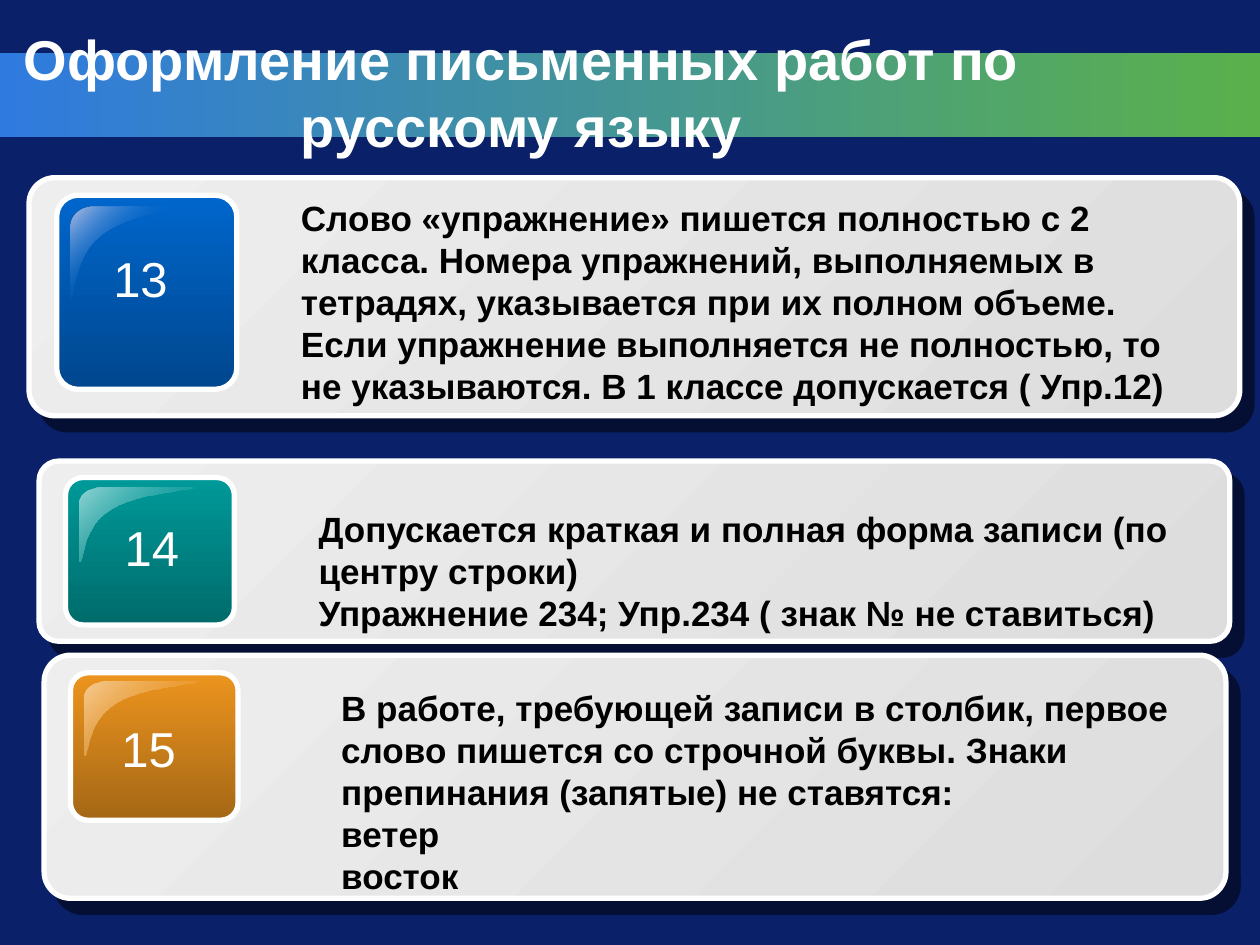
"""Build a slide of three numbered rules for written work in Russian."""
import dataclasses

import lxml.etree
import pptx
import pptx.dml.color
import pptx.enum.shapes
import pptx.enum.text
import pptx.oxml.ns
import pptx.util

Inches = pptx.util.Inches
qn = pptx.oxml.ns.qn
SHAPE = pptx.enum.shapes.MSO_SHAPE
ALIGN = pptx.enum.text.PP_ALIGN
ANCHOR = pptx.enum.text.MSO_ANCHOR
FIT = pptx.enum.text.MSO_AUTO_SIZE

Box = tuple[float, float, float, float]
Stop = tuple[int, str, int]

HUES = {
    "back": "0A2068", "white": "FFFFFF", "black": "000000",
    "sky": "2F7ADF", "grass": "5AB14B", "pale": "EEEEEE", "grey": "DDDDDD",
    "blue": "0066CC", "navy": "00478E", "mist": "B5C0E5",
    "teal": "009999", "pine": "006B6B", "mint": "93D4D4",
    "gold": "EC941E", "brown": "A56715", "cream": "F6CB92",
}
CURVES = [
    [(0.2, 0), (0.09, 0), (0, 0.09), (0, 0.21)],
    [(0, 0.99), (0.04, 1.01), (0.02, 0.52), (0.27, 0.3)],
    [(0.27, 0.3), (0.52, 0.06), (1, 0.05), (0.99, 0)],
]


@dataclasses.dataclass
class Rule:
    """One numbered panel."""
    mark: str
    lines: list[str]
    panel: Box
    badge: Box
    gleam: Box
    label: Box
    body: Box
    light: str
    dark: str
    shine: list[Stop]


RULES = [
    Rule("13", ["Слово «упражнение» пишется полностью с 2 класса. Номера упражнений, "
                "выполняемых в тетрадях, указывается при их полном объеме. "
                "Если упражнение выполняется не полностью, то не указываются. "
                "В 1 классе допускается ( Упр.12)"],
         (0.23, 1.41, 9.61, 1.89), (0.45, 1.55, 1.43, 1.54), (0.56, 1.64, 0.92, 0.77),
         (0.78, 1.92, 0.67, 0.76), (2.29, 1.51, 7.41, 2.1), "blue", "navy",
         [(0, "mist", 100), (50, "blue", 0), (100, "mist", 100)]),
    Rule("14", ["Допускается краткая и полная форма записи (по центру строки)",
                "Упражнение 234; Упр.234 ( знак № не ставиться)"],
         (0.31, 3.66, 9.45, 1.43), (0.52, 3.79, 1.34, 1.17), (0.63, 3.87, 0.91, 0.59),
         (0.87, 4.06, 0.67, 0.57), (2.43, 3.98, 6.95, 1.1), "teal", "pine",
         [(0, "mint", 100), (100, "teal", 0)]),
    Rule("15", ["В работе, требующей записи в столбик, первое слово пишется со строчной "
                "буквы. Знаки препинания (запятые) не ставятся:", "ветер", "восток"],
         (0.35, 5.2, 9.38, 1.93), (0.56, 5.34, 1.33, 1.17), (0.67, 5.41, 0.9, 0.59),
         (0.83, 5.65, 0.7, 0.57), (2.61, 5.4, 6.89, 2.1), "gold", "brown",
         [(0, "cream", 100), (100, "gold", 0)]),
]


def tint(name: str) -> pptx.dml.color.RGBColor:
    """Look up a colour."""
    return pptx.dml.color.RGBColor.from_string(HUES[name])


def place(box: Box) -> list[int]:
    """Turn inches into lengths."""
    return [Inches(side) for side in box]


def dye(node, name: str, alpha: int) -> None:
    """Add a colour with its opacity in percent to an XML node."""
    hue = lxml.etree.SubElement(node, qn("a:srgbClr"), val=HUES[name])
    if alpha < 100:
        lxml.etree.SubElement(hue, qn("a:alpha"), val=str(alpha * 1000))


def grade(shape, stops: list[Stop], angle: int) -> None:
    """Fill a shape with a gradient turned clockwise by an angle."""
    shape.fill.gradient()
    shape.fill.gradient_angle = -angle % 360
    row = shape.element.spPr.find(".//" + qn("a:gsLst"))
    for old in list(row):
        row.remove(old)
    for spot, name, alpha in stops:
        dye(lxml.etree.SubElement(row, qn("a:gs"), pos=str(spot * 1000)), name, alpha)
    shape.shadow.inherit = False


def cast(shape) -> None:
    """Give a shape a hard shadow to the lower right."""
    root = shape.element.spPr.find(qn("a:effectLst"))
    shade = lxml.etree.SubElement(
        root, qn("a:outerShdw"), dist=str(pptx.util.Pt(10.6)), dir=str(49 * 60000),
        algn="ctr", rotWithShape="0")
    dye(shade, "black", 50)


def add_tile(shapes, box: Box, curve: float, ends: tuple[str, str], angle: int):
    """Draw a rounded tile with a white edge."""
    tile = shapes.add_shape(SHAPE.ROUNDED_RECTANGLE, *place(box))
    tile.adjustments[0] = curve
    grade(tile, [(0, ends[0], 100), (100, ends[1], 100)], angle)
    tile.line.color.rgb = tint("white")
    tile.line.width = pptx.util.Pt(3)
    return tile


def add_gleam(shapes, box: Box, stops: list[Stop]) -> None:
    """Draw the curved highlight in the corner of a badge."""
    left, top, width, height = box
    spots = []
    for curve in CURVES:
        for step in range(13):
            t = step / 12
            parts = ((1 - t) ** 3, 3 * t * (1 - t) ** 2, 3 * t * t * (1 - t), t ** 3)
            x = sum(part * dot[0] for part, dot in zip(parts, curve))
            y = sum(part * dot[1] for part, dot in zip(parts, curve))
            spots.append((Inches(left + x * width), Inches(top + y * height)))
    pen = shapes.build_freeform(*spots[0])
    pen.add_line_segments(spots[1:], close=True)
    gleam = pen.convert_to_shape()
    grade(gleam, stops, 45)
    gleam.line.fill.background()


def style(para, size: int, name: str, bold: bool, align) -> None:
    """Format a paragraph."""
    para.alignment = align
    para.font.name = "Arial"
    para.font.size = pptx.util.Pt(size)
    para.font.bold = bold
    para.font.color.rgb = tint(name)


def add_text(shapes, box: Box, lines: list[str], wrap: bool, *look) -> None:
    """Write lines in a text box."""
    frame = shapes.add_textbox(*place(box)).text_frame
    frame.word_wrap = wrap
    frame.text = "\n".join(lines)
    for para in frame.paragraphs:
        style(para, *look)


def add_rule(slide, rule: Rule) -> None:
    """Draw one numbered panel as a group."""
    shapes = slide.shapes.add_group_shape().shapes
    cast(add_tile(shapes, rule.panel, 0.109, ("pale", "grey"), 45))
    add_tile(shapes, rule.badge, 0.119, (rule.light, rule.dark), 90)
    add_gleam(shapes, rule.gleam, rule.shine)
    add_text(shapes, rule.label, [rule.mark], False, 28, "white", False, ALIGN.CENTER)
    add_text(shapes, rule.body, rule.lines, True, 20, "black", True, ALIGN.LEFT)


def add_head(slide) -> None:
    """Draw the band and set the title over it."""
    band = slide.shapes.add_shape(SHAPE.RECTANGLE, *place((0, 0.42, 10, 0.67)))
    grade(band, [(0, "sky", 100), (100, "grass", 100)], 0)
    band.line.fill.background()
    title = slide.shapes.title
    slide.shapes.element.append(title.element)
    title.left, title.top, title.width, title.height = place((0, 0.42, 8.28, 0.62))
    frame = title.text_frame
    frame.text = "Оформление письменных работ по русскому языку"
    frame.word_wrap = True
    frame.auto_size = FIT.NONE
    frame.vertical_anchor = ANCHOR.MIDDLE
    style(frame.paragraphs[0], 32, "white", True, ALIGN.CENTER)


def main() -> None:
    """Build and save the slide."""
    deck = pptx.Presentation()
    deck.slide_width, deck.slide_height = Inches(10), Inches(7.5)
    slide = deck.slides.add_slide(deck.slide_layouts[5])
    slide.background.fill.solid()
    slide.background.fill.fore_color.rgb = tint("back")
    add_head(slide)
    for rule in RULES:
        add_rule(slide, rule)
    deck.save("out.pptx")


if __name__ == "__main__":
    main()
